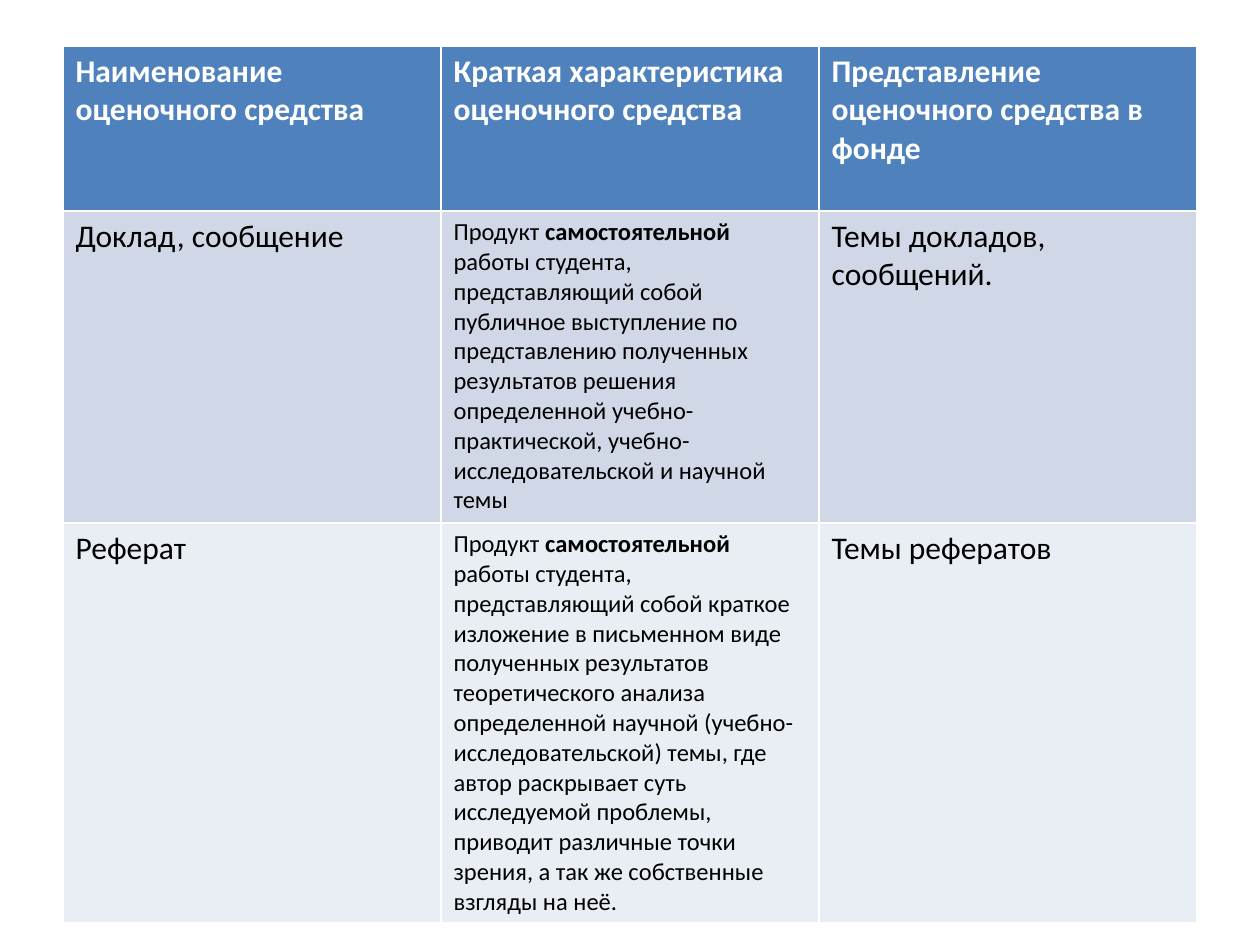
from pptx import Presentation
from pptx.dml.color import RGBColor
from pptx.util import Inches, Pt

HUES = {"head": "4F81BD", "odd": "D0D8E8", "even": "E9EDF4",
        "white": "FFFFFF", "black": "000000"}
HEAD = {"size": Pt(18), "bold": True, "name": "Calibri"}
BODY = {**HEAD, "bold": False}
SMALL = {**BODY, "size": Pt(14)}
STRONG = {**SMALL, "bold": True}


def detail(text):
    return [("Продукт ", SMALL), ("самостоятельной ", STRONG), (text, SMALL)]


ROWS = [
    (165, "head", "white", [
        [("Наименование \vоценочного средства", HEAD)],
        [("Краткая характеристика оценочного средства", HEAD)],
        [("Представление оценочного средства в фонде", HEAD)],
    ]),
    (312, "odd", "black", [
        [("Доклад, сообщение", BODY)],
        detail("работы студента, представляющий собой публичное выступление "
               "по представлению полученных результатов решения определенной "
               "учебно-практической, учебно-исследовательской и научной темы"),
        [("Темы докладов, сообщений.", BODY)],
    ]),
    (400, "even", "black", [
        [("Реферат", BODY)],
        detail("работы студента, представляющий собой краткое изложение в "
               "письменном виде полученных результатов теоретического анализа "
               "определенной научной (учебно-исследовательской) темы, где "
               "автор раскрывает суть исследуемой проблемы, приводит различные "
               "точки зрения, а так же собственные взгляды на неё."),
        [("Темы рефератов", BODY)],
    ]),
]


def px(size):
    return round(size * Inches(1) / 126)


def tint(hue):
    return RGBColor.from_string(HUES[hue])


def fill_cell(cell, parts, back, ink):
    cell.fill.solid()
    cell.fill.fore_color.rgb = tint(back)
    para = cell.text_frame.paragraphs[0]
    for index, (text, form) in enumerate(parts):
        for turn, piece in enumerate(text.split("\v")):
            if turn:
                para.add_line_break()
            run = para.add_run()
            run.text = piece
            run.font.color.rgb = tint(ink)
            for key, value in form.items():
                setattr(run.font, key, value)


def draw_table(slide, left, top, width, height):
    count = len(ROWS[0][3])
    table = slide.shapes.add_table(
        len(ROWS), count, px(left), px(top), px(width), px(height)).table
    for column in table.columns:
        column.width = px(width // count)
    for row, (tall, back, ink, texts) in zip(table.rows, ROWS):
        row.height = px(tall)
        for cell, parts in zip(row.cells, texts):
            fill_cell(cell, parts, back, ink)


def main():
    deck = Presentation()
    deck.slide_width, deck.slide_height = px(1260), px(945)
    slide = deck.slides.add_slide(deck.slide_layouts[6])
    draw_table(slide, 63, 46, 1134, sum(row[0] for row in ROWS))
    deck.save("out.pptx")


if __name__ == "__main__":
    main()
